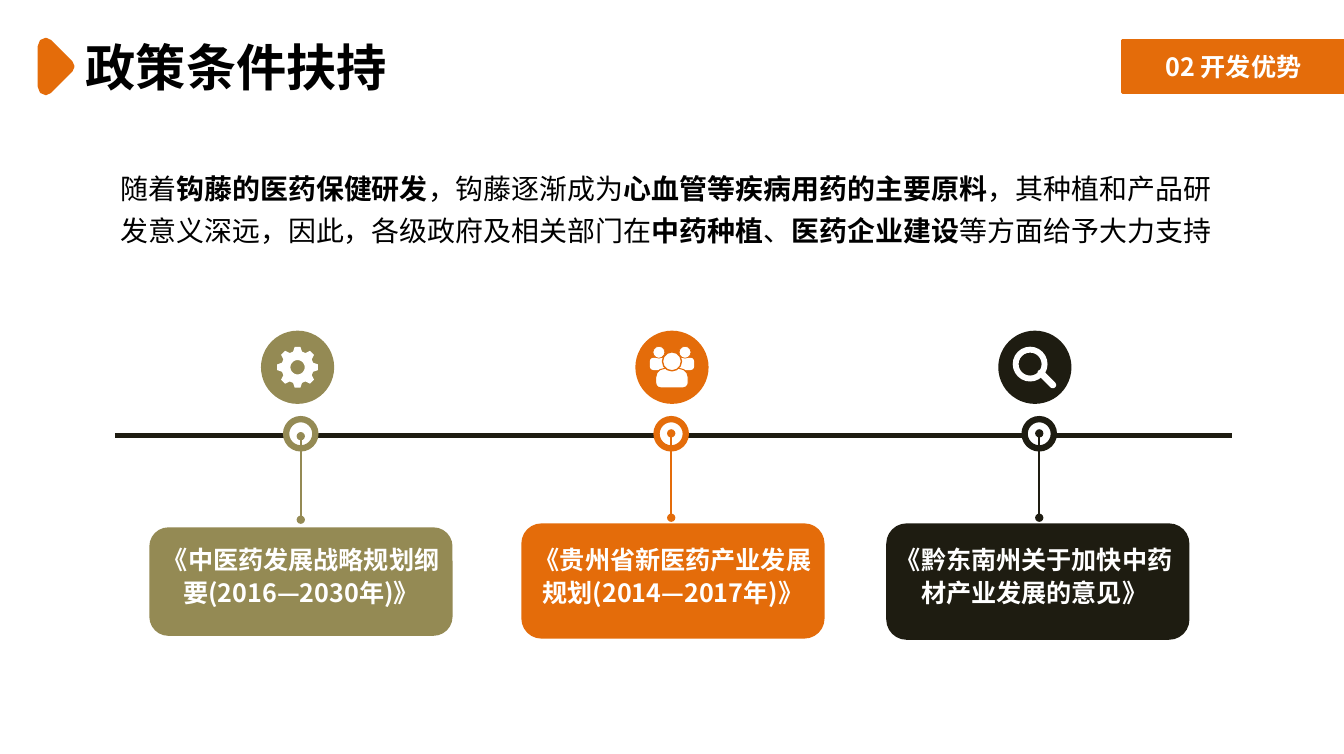
from dataclasses import dataclass
from math import cos, radians, sin
from typing import Callable

from lxml.etree import SubElement
from pptx import Presentation
from pptx.dml.color import RGBColor
from pptx.enum.shapes import MSO_CONNECTOR, MSO_SHAPE
from pptx.enum.text import MSO_ANCHOR, MSO_AUTO_SIZE, PP_ALIGN
from pptx.oxml.ns import qn
from pptx.util import Cm, Pt

FONT = "Noto Sans CJK SC"
COLORS = {"orange": "E46C0A", "olive": "948A54", "dark": "1E1C11",
          "white": "FFFFFF", "black": "000000"}
BADGE_Y, RING_Y, TEXT_TOP = 9.28, 10.96, 13.54
BADGE_SIZE, RING_SIZE, CARD_WIDTH = 1.85, 0.74, 7.59


@dataclass
class Milestone:
    color: str
    draw_icon: Callable
    badge_x: float
    ring_x: float
    stem_top: float
    stem_bottom: float
    card: tuple[float, float, float]  # left, top, height
    text_left: float
    text_width: float
    text: str


def rgb(color: str) -> RGBColor:
    return RGBColor.from_string(COLORS[color])


def style_shape(shape, fill: str, line: str | None = None, width: float = 2) -> None:
    shape.shadow.inherit = False
    shape.fill.solid()
    shape.fill.fore_color.rgb = rgb(fill)
    if line:
        shape.line.color.rgb = rgb(line)
        shape.line.width = Pt(width)
    else:
        shape.line.fill.background()


def add_box(page, kind, left: float, top: float, width: float, height: float,
            fill: str, line: str | None = None, line_width: float = 2):
    box = page.shapes.add_shape(kind, Cm(left), Cm(top), Cm(width), Cm(height))
    style_shape(box, fill, line, line_width)
    return box


def add_circle(page, x: float, y: float, size: float, fill: str,
               line: str | None = None, line_width: float = 2):
    return add_box(page, MSO_SHAPE.OVAL, x - size / 2, y - size / 2, size, size,
                   fill, line, line_width)


def add_outline(page, contours: list, fill: str, line: str | None = None) -> None:
    contours = [[(Cm(x), Cm(y)) for x, y in contour] for contour in contours]
    builder = page.shapes.build_freeform(*contours[0][0])
    for number, contour in enumerate(contours):
        if number:
            builder.move_to(*contour[0])
        builder.add_line_segments(contour[1:], close=True)
    style_shape(builder.convert_to_shape(), fill, line)


def add_line(page, start: tuple, end: tuple, color: str, width: float,
             dots: bool = False) -> None:
    line = page.shapes.add_connector(
        MSO_CONNECTOR.STRAIGHT, *(Cm(value) for value in start + end))
    line.line.color.rgb = rgb(color)
    line.line.width = Pt(width)
    if dots:
        outline = line.line._get_or_add_ln()
        for name in ("a:headEnd", "a:tailEnd"):
            SubElement(outline, qn(name), type="oval")
    SubElement(line._element.spPr, qn("a:effectLst"))


def format_span(span, size: float, color: str, bold: bool) -> None:
    span.font.size = Pt(size)
    span.font.bold = bold
    span.font.name = FONT
    span.font.color.rgb = rgb(color)
    SubElement(span._r.get_or_add_rPr(), qn("a:ea"), typeface=FONT)


def add_text(page, left: float, top: float, width: float, height: float):
    box = page.shapes.add_textbox(Cm(left), Cm(top), Cm(width), Cm(height))
    box.text_frame.word_wrap = True
    return box.text_frame.paragraphs[0]


# Icons
def draw_gear(page, x: float, y: float, color: str) -> None:
    def point(radius: float, angle: float) -> tuple[float, float]:
        return x + radius * sin(radians(angle)), y - radius * cos(radians(angle))

    tooth = [(0.41, -16), (0.52, -8), (0.52, 8), (0.41, 16)]
    rim = [point(radius, turn + angle)
           for turn in range(0, 360, 45) for radius, angle in tooth]
    hole = [point(0.18, angle) for angle in range(360, 0, -10)]
    add_outline(page, [rim, hole], "white")


def draw_people(page, x: float, y: float, color: str) -> None:
    for side in (-1, 1):
        body = add_box(page, MSO_SHAPE.ROUNDED_RECTANGLE, x + side * 0.35 - 0.21,
                       y - 0.24, 0.42, 0.31, "white")
        body.adjustments[0] = 0.3
        add_circle(page, x + side * 0.33, y - 0.38, 0.3, "white", color, 0.5)
    body = add_box(page, MSO_SHAPE.ROUND_2_SAME_RECTANGLE, x - 0.41, y + 0.03,
                   0.82, 0.49, "white", color, 0.75)
    body.adjustments[0] = 0.45
    body.adjustments[1] = 0.25
    add_circle(page, x, y - 0.15, 0.48, "white", color, 1)


def draw_magnifier(page, x: float, y: float, color: str) -> None:
    lens = add_box(page, MSO_SHAPE.DONUT, x - 0.56, y - 0.52, 0.88, 0.88, "white")
    lens.adjustments[0] = 0.17
    handle = add_box(page, MSO_SHAPE.ROUNDED_RECTANGLE, x, y + 0.21, 0.6, 0.17, "white")
    handle.adjustments[0] = 0.5
    handle.rotation = 45


MILESTONES = [
    Milestone("olive", draw_gear, 7.52, 7.6, 11.02, 13.13, (3.81, 13.36, 2.67),
              3.61, 8, "《中医药发展战略规划纲要(2016—2030年)》"),
    Milestone("orange", draw_people, 16.98, 16.96, 10.95, 13.08, (13.21, 13.26, 2.84),
              13.21, 7.59, "《贵州省新医药产业发展规划(2014—2017年)》"),
    Milestone("dark", draw_magnifier, 26.15, 26.26, 10.95, 13.08, (22.43, 13.26, 2.87),
              22.17, 7.92, "《黔东南州关于加快中药材产业发展的意见》"),
]
INTRO = [("随着", False), ("钩藤的医药保健研发", True), ("，钩藤逐渐成为", False),
         ("心血管等疾病用药的主要原料", True),
         ("，其种植和产品研发意义深远，因此，各级政府及相关部门在", False),
         ("中药种植", True), ("、", False), ("医药企业建设", True),
         ("等方面给予大力支持", False)]


def draw_header(page) -> None:
    title = page.shapes.title
    title.left, title.top, title.width, title.height = Cm(1.91), Cm(0.79), Cm(8.28), Cm(1.8)
    frame = title.text_frame
    frame.text = "政策条件扶持"
    frame.word_wrap = False
    frame.auto_size = MSO_AUTO_SIZE.NONE
    frame.vertical_anchor = MSO_ANCHOR.TOP
    frame.paragraphs[0].alignment = PP_ALIGN.LEFT
    format_span(frame.paragraphs[0].runs[0], 36, "black", True)

    # Section tag
    tag = add_box(page, MSO_SHAPE.RECTANGLE, 28.37, 1.02, 5.59, 1.32, "orange", "orange")
    tag.text_frame.text = "02 开发优势"
    tag.text_frame.vertical_anchor = MSO_ANCHOR.MIDDLE
    tag.text_frame.paragraphs[0].alignment = PP_ALIGN.CENTER
    format_span(tag.text_frame.paragraphs[0].runs[0], 18, "white", True)

    # Rounded arrow beside the title, symmetric about its middle
    middle = 1.68
    upper = [(0.99, 0.51), (1.04, 0.64), (1.16, 0.69), (1.27, 0.64), (1.8, 0.11)]
    points = [(x, middle - rise) for x, rise in upper] + [(1.85, middle)]
    points += [(x, middle + rise) for x, rise in reversed(upper)]
    add_outline(page, [points], "orange", "orange")


def draw_milestone(page, item: Milestone) -> None:
    add_circle(page, item.ring_x, RING_Y, RING_SIZE, "white", item.color, 4.5)
    add_line(page, (item.ring_x, item.stem_bottom), (item.ring_x, item.stem_top),
             item.color, 1.5, dots=True)
    left, top, height = item.card
    add_box(page, MSO_SHAPE.ROUNDED_RECTANGLE, left, top, CARD_WIDTH, height,
            item.color, item.color)
    add_circle(page, item.badge_x, BADGE_Y, BADGE_SIZE, item.color)
    item.draw_icon(page, item.badge_x, BADGE_Y, item.color)
    para = add_text(page, item.text_left, TEXT_TOP, item.text_width, 1.96)
    para.text = item.text
    para.alignment = PP_ALIGN.CENTER
    para.line_spacing = Pt(24)
    format_span(para.runs[0], 18, "white", True)


def main() -> None:
    deck = Presentation()
    deck.slide_width, deck.slide_height = Cm(33.96), Cm(19.05)
    page = deck.slides.add_slide(deck.slide_layouts[5])
    draw_header(page)

    # Introduction
    para = add_text(page, 2.79, 4.01, 28.4, 2.29)
    para.line_spacing = Pt(30)
    for text, bold in INTRO:
        span = para.add_run()
        span.text = text
        format_span(span, 20, "black", bold)

    # Timeline
    add_line(page, (2.9, 11.01), (31.12, 11.01), "dark", 3.25)
    for item in MILESTONES:
        draw_milestone(page, item)
    deck.save("out.pptx")


if __name__ == "__main__":
    main()
